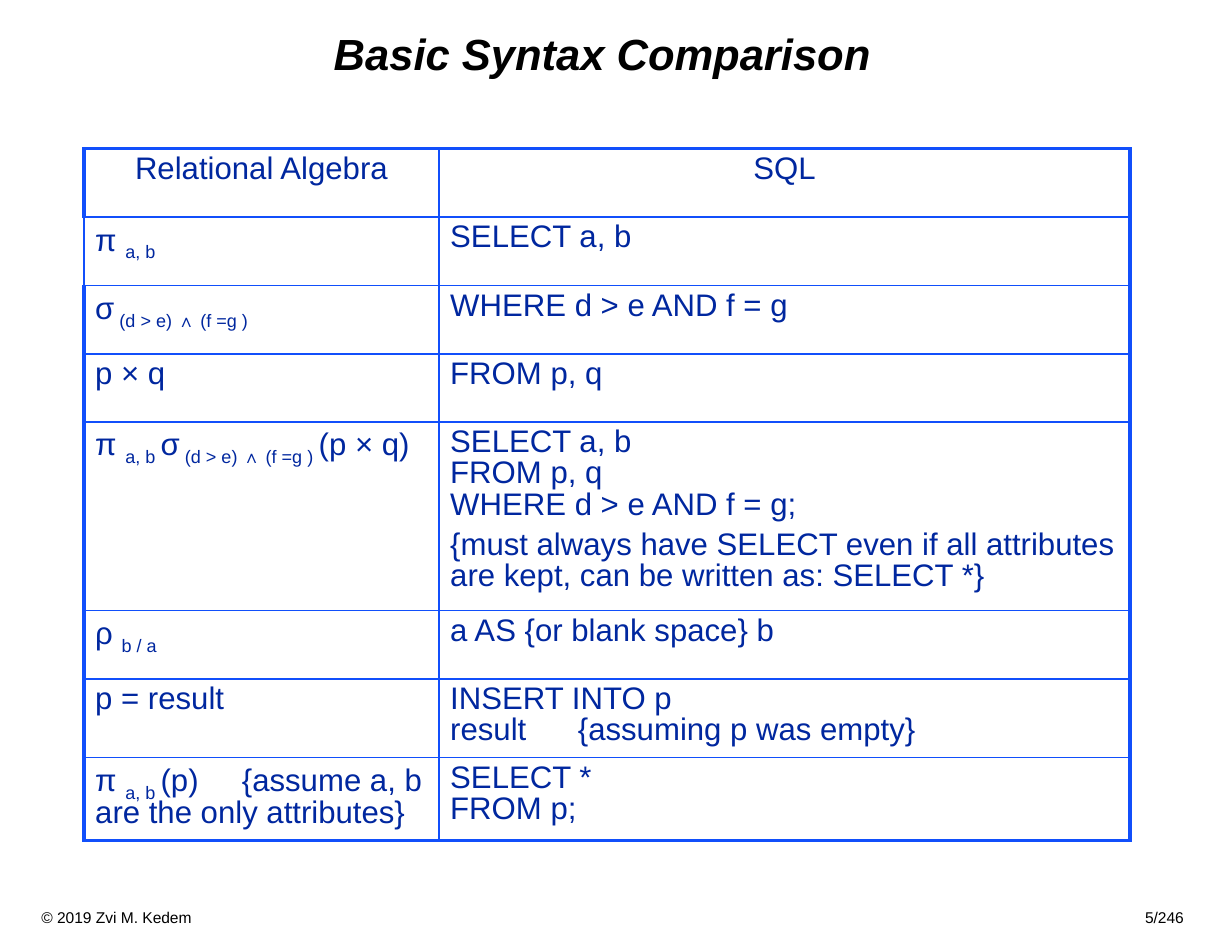
from dataclasses import dataclass

from pptx import Presentation
from pptx.dml.color import RGBColor
from pptx.enum import text
from pptx.oxml.xmlchemy import OxmlElement
from pptx.util import Inches, Pt


@dataclass(frozen=True)
class Theme:
    font: str = "Arial"
    black: str = "000000"
    ink: str = "00279F"
    line: str = "114FFB"
    title: int = 28
    body: int = 20
    footer: int = 10
    thin: float = 1
    medium: float = 1.5
    thick: float = 2.25


T = Theme()
TITLE = {"size": Pt(T.title), "name": T.font, "bold": True, "italic": True}
BODY = {"size": Pt(T.body), "name": T.font}
FOOTER = {"size": Pt(T.footer), "name": T.font}


def write(p, markup, fmt, color, tab=None, align="l"):
    for i, part in enumerate(markup.split("_")):
        for j, line in enumerate(part.split("\n")):
            if j:
                p.add_line_break()
            r = p.add_run()
            r.text = line
            for key, value in fmt.items():
                setattr(r.font, key, value)
            r.font.color.rgb = RGBColor.from_string(color)
            if i % 2:
                r.font._element.set("baseline", "-25000")
    if tab:
        tabs = OxmlElement("a:tabLst")
        stop = OxmlElement("a:tab")
        stop.set("pos", str(Inches(tab)))
        stop.set("algn", align)
        tabs.append(stop)
        p._p.get_or_add_pPr().append(tabs)


def border(cell, widths):
    tcPr = cell._tc.get_or_add_tcPr()
    for side, width in zip(("lnL", "lnR", "lnT", "lnB"), widths):
        ln = OxmlElement(f"a:{side}")
        ln.set("w", str(Pt(width)))
        fill = OxmlElement("a:solidFill")
        clr = OxmlElement("a:srgbClr")
        clr.set("val", T.line)
        fill.append(clr)
        ln.append(fill)
        tcPr.append(ln)


prs = Presentation()
prs.slide_width, prs.slide_height = Inches(11), Inches(8.5)
s = prs.slides.add_slide(prs.slide_layouts[6])

sp = s.shapes.add_textbox(Inches(0.75), Inches(0.25), Inches(9.25), Inches(0.5))
tf = sp.text_frame
tf.word_wrap = True
tf.vertical_anchor = text.MSO_ANCHOR.MIDDLE
p = tf.paragraphs[0]
p.alignment = text.PP_ALIGN.CENTER
p.line_spacing = 0.9
write(p, "Basic Syntax Comparison", TITLE, T.black)

ROWS = [
    ("Relational Algebra", "SQL", 0.61),
    ("π _a, b_", "SELECT a, b", 0.61),
    ("σ_ (d > e) ∧ (f =g )_", "WHERE d > e AND f = g", 0.61),
    ("p × q", "FROM p, q", 0.61),
    ("π _a, b _σ_ (d > e) ∧ (f =g ) _(p × q)",
     "SELECT a, b\nFROM p, q\nWHERE d > e AND f = g;|"
     "{must always have SELECT even if all attributes are kept, "
     "can be written as: SELECT *}", 1.58),
    ("ρ _b / a_", "a AS {or blank space} b", 0.61),
    ("p = result", "INSERT INTO p\nresult\t{assuming p was empty}", 0.66),
    ("π _a, b _(p)\t{assume a, b are the only attributes}",
     "SELECT *\nFROM p;", 0.7),
]
COLS = (3.17, 6.17)
TABS = (1.31, 1.14)

table = s.shapes.add_table(
    len(ROWS), len(COLS), Inches(0.75), Inches(1.33),
    Inches(sum(COLS)), Inches(sum(row[-1] for row in ROWS))).table
table.first_row = table.horz_banding = False
for col, width in zip(table.columns, COLS):
    col.width = Inches(width)

last = len(ROWS) - 1
for i, (*entries, height) in enumerate(ROWS):
    table.rows[i].height = Inches(height)
    top = {0: T.thick, 1: T.medium}.get(i, T.thin)
    bottom = {0: T.medium, last: T.thick}.get(i, T.thin)
    left = T.medium if i == 1 else T.thick
    sides = ((left, T.thin), (T.thin, T.thick))
    for j, entry in enumerate(entries):
        cell = table.cell(i, j)
        border(cell, (*sides[j], top, bottom))
        cell.fill.background()
        tf = cell.text_frame
        for k, markup in enumerate(entry.split("|")):
            p = tf.add_paragraph() if k else tf.paragraphs[0]
            p.line_spacing = 0.9
            if k:
                p.space_before = Pt(0.3 * T.body)
            if i == 0:
                p.alignment = text.PP_ALIGN.CENTER
            write(p, markup, BODY, T.ink, TABS[j] if "\t" in markup else None)

sp = s.shapes.add_textbox(0, Inches(8.06), Inches(11), Inches(0.27))
tf = sp.text_frame
tf.word_wrap = True
tf.margin_left = Inches(0.37)
write(tf.paragraphs[0], "© 2019 Zvi M. Kedem\t5/246", FOOTER, T.black, 10.2, "r")

prs.save("out.pptx")
